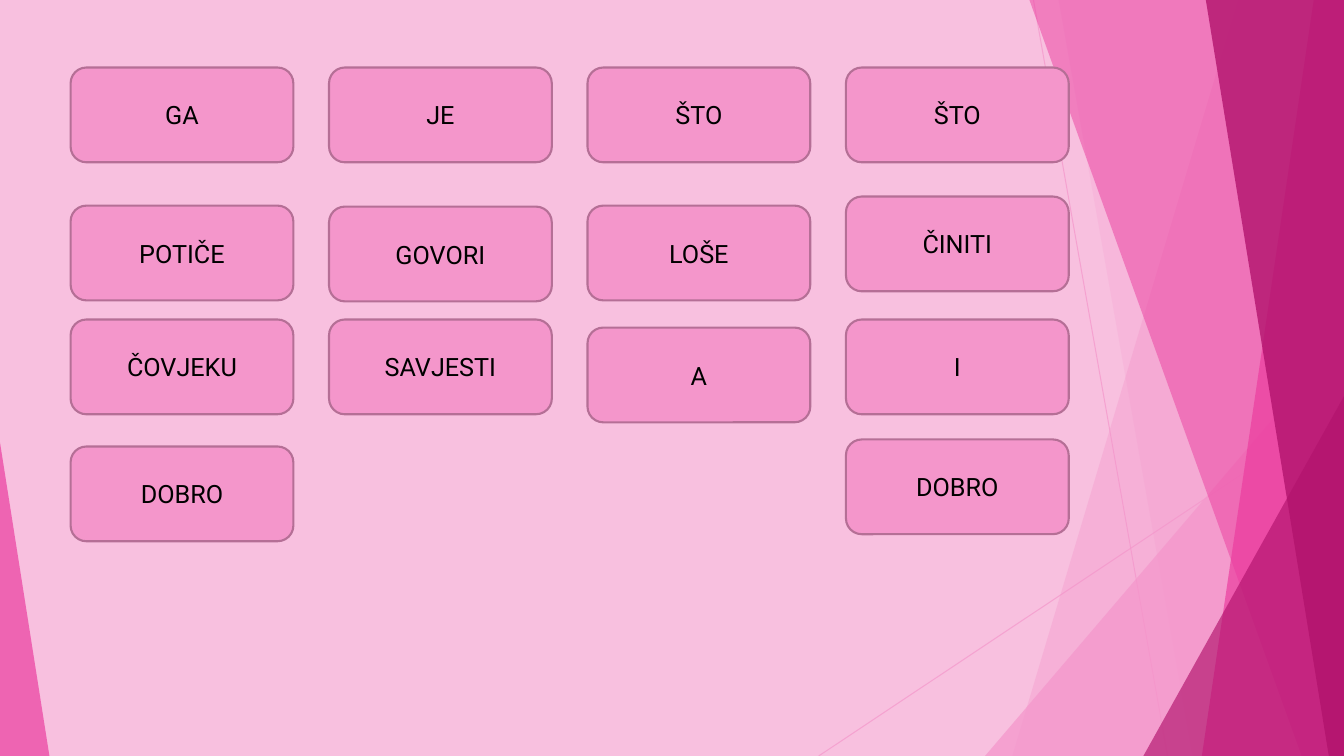
from dataclasses import dataclass

from pptx import Presentation
from pptx.dml.color import RGBColor
from pptx.enum.shapes import MSO_CONNECTOR, MSO_SHAPE
from pptx.enum.text import MSO_ANCHOR, PP_ALIGN
from pptx.oxml.ns import qn
from pptx.oxml.xmlchemy import OxmlElement
from pptx.util import Inches, Pt

STRAIGHT = MSO_CONNECTOR.STRAIGHT
TRIANGLE = MSO_SHAPE.ISOSCELES_TRIANGLE
ROUNDED_RECTANGLE = MSO_SHAPE.ROUNDED_RECTANGLE
MIDDLE = MSO_ANCHOR.MIDDLE
CENTER = PP_ALIGN.CENTER


@dataclass(frozen=True)
class Theme:
    background: RGBColor = RGBColor.from_string("F8C0DF")
    light: RGBColor = RGBColor.from_string("F496CB")
    bright: RGBColor = RGBColor.from_string("EB3D9F")
    dark: RGBColor = RGBColor.from_string("B2136D")
    card_border: RGBColor = RGBColor.from_string("B56F96")
    text: RGBColor = RGBColor.from_string("000000")
    font: str = "Roboto"
    text_size: int = 18
    border_width: float = 1.5
    ray_width: float = 0.75


THEME = Theme()
WIDTH, HEIGHT = 13.33, 7.5

# One list per column, each card as (word, top)
CARD_COLUMNS = [
    [("GA", 0.67), ("POTIČE", 2.04), ("ČOVJEKU", 3.17), ("DOBRO", 4.43)],
    [("JE", 0.67), ("GOVORI", 2.05), ("SAVJESTI", 3.17)],
    [("ŠTO", 0.67), ("LOŠE", 2.04), ("A", 3.25)],
    [("ŠTO", 0.67), ("ČINITI", 1.95), ("I", 3.17), ("DOBRO", 4.36)],
]
CARD_WIDTH, CARD_HEIGHT = 2.21, 0.94
FIRST_LEFT, LAST_LEFT = 0.7, 8.39
COLUMN_PITCH = (LAST_LEFT - FIRST_LEFT) / (len(CARD_COLUMNS) - 1)

RAYS = [((10.25, 0), (11.58, HEIGHT)), ((WIDTH, 4.03), (8.12, HEIGHT))]
RAY_OPACITY = 70

# Back to front. Bands: x at top, x at bottom. Triangles: left, top, width, apex.
DECORATIONS = [
    ("band", (12.28, 10.04), THEME.light, 36),
    ("band", (10.5, 11.83), THEME.light, 20),
    ("triangle", (9.77, 3.33, 3.56, 1), THEME.light, 72),
    ("band", (10.21, 12.91), THEME.bright, 50),
    ("band", (13.03, 11.92), THEME.bright, 70),
    ("band", (11.96, 13.18), THEME.dark, 80),
    ("triangle", (11.34, 3.93, 1.99, 1), THEME.dark, 66),
    ("triangle", (0, 4.39, 0.49, 0), THEME.bright, 70),
]


def set_opacity(shape, percent):
    for color in shape._element.spPr.iter(qn("a:srgbClr")):
        alpha = OxmlElement("a:alpha")
        alpha.set("val", str(percent * 1000))
        color.append(alpha)


def add_ray(slide, start, end):
    ray = slide.shapes.add_connector(STRAIGHT, *map(Inches, start + end))
    ray.line.color.rgb = THEME.light
    ray.line.width = Pt(THEME.ray_width)
    ray._element.spPr.append(OxmlElement("a:effectLst"))
    set_opacity(ray, RAY_OPACITY)


def add_band(slide, top_x, bottom_x):
    """Add a full-height panel from a slanted edge to the right slide edge."""
    builder = slide.shapes.build_freeform(Inches(top_x), 0)
    corners = [(WIDTH, 0), (WIDTH, HEIGHT), (bottom_x, HEIGHT)]
    builder.add_line_segments([(Inches(x), Inches(y)) for x, y in corners])
    return builder.convert_to_shape()


def add_triangle(slide, left, top, width, apex):
    """Add a triangle standing on the bottom slide edge."""
    box = map(Inches, (left, top, width, HEIGHT - top))
    triangle = slide.shapes.add_shape(TRIANGLE, *box)
    triangle.adjustments[0] = apex
    return triangle


def add_decoration(slide, kind, geometry, color, opacity):
    add = add_band if kind == "band" else add_triangle
    shape = add(slide, *geometry)
    shape.shadow.inherit = False
    shape.fill.solid()
    shape.fill.fore_color.rgb = color
    shape.line.fill.background()
    set_opacity(shape, opacity)


def add_card(slide, word, left, top):
    box = map(Inches, (left, top, CARD_WIDTH, CARD_HEIGHT))
    card = slide.shapes.add_shape(ROUNDED_RECTANGLE, *box)
    card.shadow.inherit = False
    card.fill.solid()
    card.fill.fore_color.rgb = THEME.light
    card.line.color.rgb = THEME.card_border
    card.line.width = Pt(THEME.border_width)
    card.text_frame.text = word
    card.text_frame.vertical_anchor = MIDDLE
    paragraph = card.text_frame.paragraphs[0]
    paragraph.alignment = CENTER
    paragraph.font.name = THEME.font
    paragraph.font.size = Pt(THEME.text_size)
    paragraph.font.color.rgb = THEME.text


def main():
    presentation = Presentation()
    presentation.slide_width = Inches(WIDTH)
    presentation.slide_height = Inches(HEIGHT)
    slide = presentation.slides.add_slide(presentation.slide_layouts[6])
    slide.background.fill.solid()
    slide.background.fill.fore_color.rgb = THEME.background

    for start, end in RAYS:
        add_ray(slide, start, end)
    for decoration in DECORATIONS:
        add_decoration(slide, *decoration)
    for column, cards in enumerate(CARD_COLUMNS):
        for word, top in cards:
            add_card(slide, word, FIRST_LEFT + column * COLUMN_PITCH, top)

    presentation.save("out.pptx")


if __name__ == "__main__":
    main()
